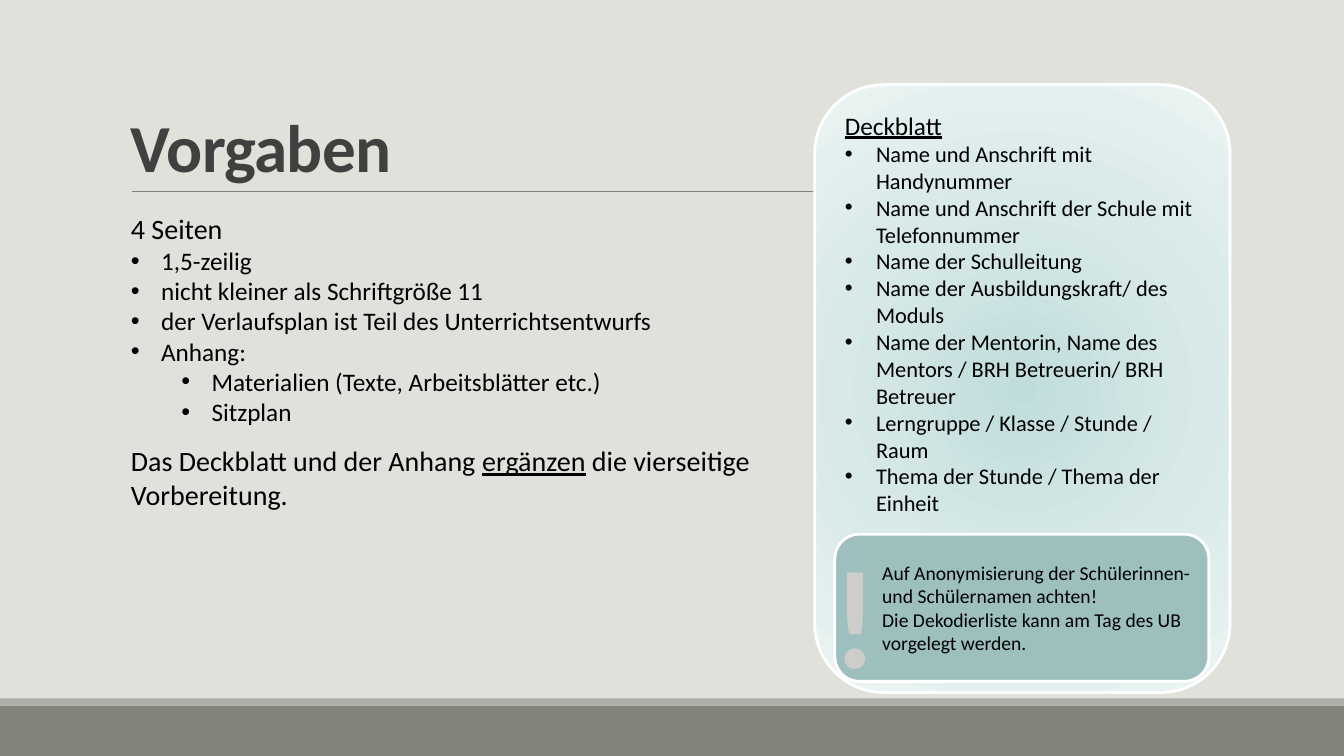
"""Build the slide "Vorgaben" with its cover sheet card and reminder."""
from dataclasses import dataclass
from lxml.etree import SubElement
from pptx import Presentation
from pptx.dml.color import RGBColor
from pptx.enum.shapes import MSO_CONNECTOR, MSO_SHAPE
from pptx.enum.text import MSO_ANCHOR, PP_ALIGN
from pptx.oxml import parse_xml
from pptx.oxml.ns import nsdecls, qn
from pptx.util import Emu, Pt

SCALE = 9144
COLORS = {
    "back": "E1E1DB", "foot": "82847C", "strip": "ACADA8", "rule": "808080",
    "title": "404040", "text": "000000", "edge": "FFFFFF", "note": "9DBFBE",
    "mark": "CDCDCA", "core": "C0DDDC", "mid": "D7E9E8", "rim": "EBF4F3",
}


@dataclass
class Para:
    text: str
    size: int
    left: int = 0
    hang: int = 0
    after: int = 0
    under: str = ""
    color: str = "text"
    bold: bool = False
    track: int = 0
    lead: float = 1.0
    align: PP_ALIGN = PP_ALIGN.LEFT


@dataclass
class Box:
    place: tuple[int, int, int, int]
    paras: list[Para]
    kind: MSO_SHAPE | None = None
    fill: str = ""
    edge: str = ""
    anchor: MSO_ANCHOR = MSO_ANCHOR.TOP


def px(num: int) -> Emu:
    """Turn px into EMU."""
    return Emu(num * SCALE)


def hue(name: str) -> RGBColor:
    """Look up a named colour."""
    return RGBColor.from_string(COLORS[name])


def add_para(para, data: Para) -> None:
    """Fill one paragraph with its runs and format."""
    props = para._p.get_or_add_pPr()
    props.set("marL", str(px(data.left)))
    props.set("indent", str(px(-data.hang)))
    if data.hang:
        SubElement(props, qn("a:buFont"), typeface="Arial")
        SubElement(props, qn("a:buChar"), char="•")
    form = {"alignment": data.align, "line_spacing": data.lead,
            "space_before": Pt(0), "space_after": Pt(data.after)}
    for key, val in form.items():
        setattr(para, key, val)
    parts = data.text.partition(data.under) if data.under else (data.text,)
    for part in filter(None, parts):
        run = para.add_run()
        run.text = part
        form = {"name": "Calibri", "size": Pt(data.size), "bold": data.bold,
                "underline": part == data.under}
        for key, val in form.items():
            setattr(run.font, key, val)
        run.font.color.rgb = hue(data.color)
        if data.track:
            run._r.get_or_add_rPr().set("spc", str(data.track))


def glow(shape) -> None:
    """Give a shape the round fade from core to rim."""
    stops = "".join(
        f'<a:gs pos="{pos}"><a:srgbClr val="{COLORS[name]}"/></a:gs>'
        for pos, name in ((0, "core"), (50000, "mid"), (100000, "rim")))
    fade = parse_xml(
        f'<a:gradFill {nsdecls("a")} rotWithShape="1"><a:gsLst>{stops}</a:gsLst>'
        '<a:path path="circle"><a:fillToRect l="50000" t="50000" r="50000" '
        'b="50000"/></a:path></a:gradFill>')
    shape._element.spPr.find(qn("a:prstGeom")).addnext(fade)


def add_box(slide, box: Box) -> None:
    """Draw a shape or text box with its text."""
    place = [px(num) for num in box.place]
    if box.kind is None:
        shape = slide.shapes.add_textbox(*place)
    else:
        shape = slide.shapes.add_shape(box.kind, *place)
        shape.shadow.inherit = False
        if box.fill == "glow":
            glow(shape)
        else:
            shape.fill.solid()
            shape.fill.fore_color.rgb = hue(box.fill)
        if box.edge:
            shape.line.color.rgb = hue(box.edge)
            shape.line.width = Pt(2)
        else:
            shape.line.fill.background()
    frame = shape.text_frame
    for key, val in {"word_wrap": True, "vertical_anchor": box.anchor}.items():
        setattr(frame, key, val)
    for num, data in enumerate(box.paras):
        add_para(frame.add_paragraph() if num else frame.paragraphs[0], data)


def add_rule(slide, left: int, right: int, top: int) -> None:
    """Draw the thin line below the title."""
    rule = slide.shapes.add_connector(
        MSO_CONNECTOR.STRAIGHT, px(left), px(top), px(right), px(top))
    rule.line.color.rgb = hue("rule")
    rule.line.width = Pt(0.5)
    SubElement(rule._element.spPr, qn("a:effectLst"))


def items(lines: list[str], size: int, left: int, hang: int) -> list[Para]:
    """Make bullet points of one level."""
    return [Para(line, size, left, hang) for line in lines]


RECT, ROUND = MSO_SHAPE.RECTANGLE, MSO_SHAPE.ROUNDED_RECTANGLE
BARS = [
    Box((0, 700, 1333, 50), [], RECT, "foot"),
    Box((0, 693, 1333, 7), [], RECT, "strip"),
]
BOXES = [
    Box((120, 31, 1100, 159),
        [Para("Vorgaben", 48, color="title", bold=True, track=-50, lead=0.85)],
        anchor=MSO_ANCHOR.BOTTOM),
    Box((120, 205, 668, 310), [
        Para("4 Seiten", 20),
        *items(["1,5-zeilig", "nicht kleiner als Schriftgröße 11",
                "der Verlaufsplan ist Teil des Unterrichtsentwurfs",
                "Anhang:"], 18, 30, 30),
        Para("Materialien (Texte, Arbeitsblätter etc.)", 18, 80, 30),
        Para("Sitzplan", 18, 80, 30, after=12),
        Para("Das Deckblatt und der Anhang ergänzen die vierseitige Vorbereitung.",
             20, after=12, under="ergänzen"),
    ]),
    Box((808, 84, 412, 603), [
        Para("Deckblatt", 18, under="Deckblatt"),
        *items(["Name und Anschrift mit Handynummer",
                "Name und Anschrift der Schule mit Telefonnummer",
                "Name der Schulleitung",
                "Name der Ausbildungskraft/ des Moduls",
                "Name der Mentorin, Name des Mentors / BRH Betreuerin/ BRH Betreuer",
                "Lerngruppe / Klasse / Stunde / Raum",
                "Thema der Stunde / Thema der Einheit"], 16, 31, 31),
    ], ROUND, "glow", "edge"),
    Box((828, 530, 371, 146), items([
        "Auf Anonymisierung der Schülerinnen- und Schülernamen achten!",
        "Die Dekodierliste kann am Tag des UB vorgelegt werden.",
    ], 14, 30, 0), ROUND, "note", "edge", MSO_ANCHOR.MIDDLE),
    Box((816, 519, 62, 179),
        [Para("!", 100, color="mark", bold=True, align=PP_ALIGN.CENTER)]),
]


def main() -> None:
    """Build and save the deck."""
    deck = Presentation()
    for key, val in {"slide_width": 1333, "slide_height": 750}.items():
        setattr(deck, key, px(val))
    slide = deck.slides.add_slide(deck.slide_layouts[6])
    slide.background.fill.solid()
    slide.background.fill.fore_color.rgb = hue("back")
    for bar in BARS:
        add_box(slide, bar)
    add_rule(slide, 131, 1221, 190)
    for box in BOXES:
        add_box(slide, box)
    deck.save("out.pptx")


if __name__ == "__main__":
    main()
